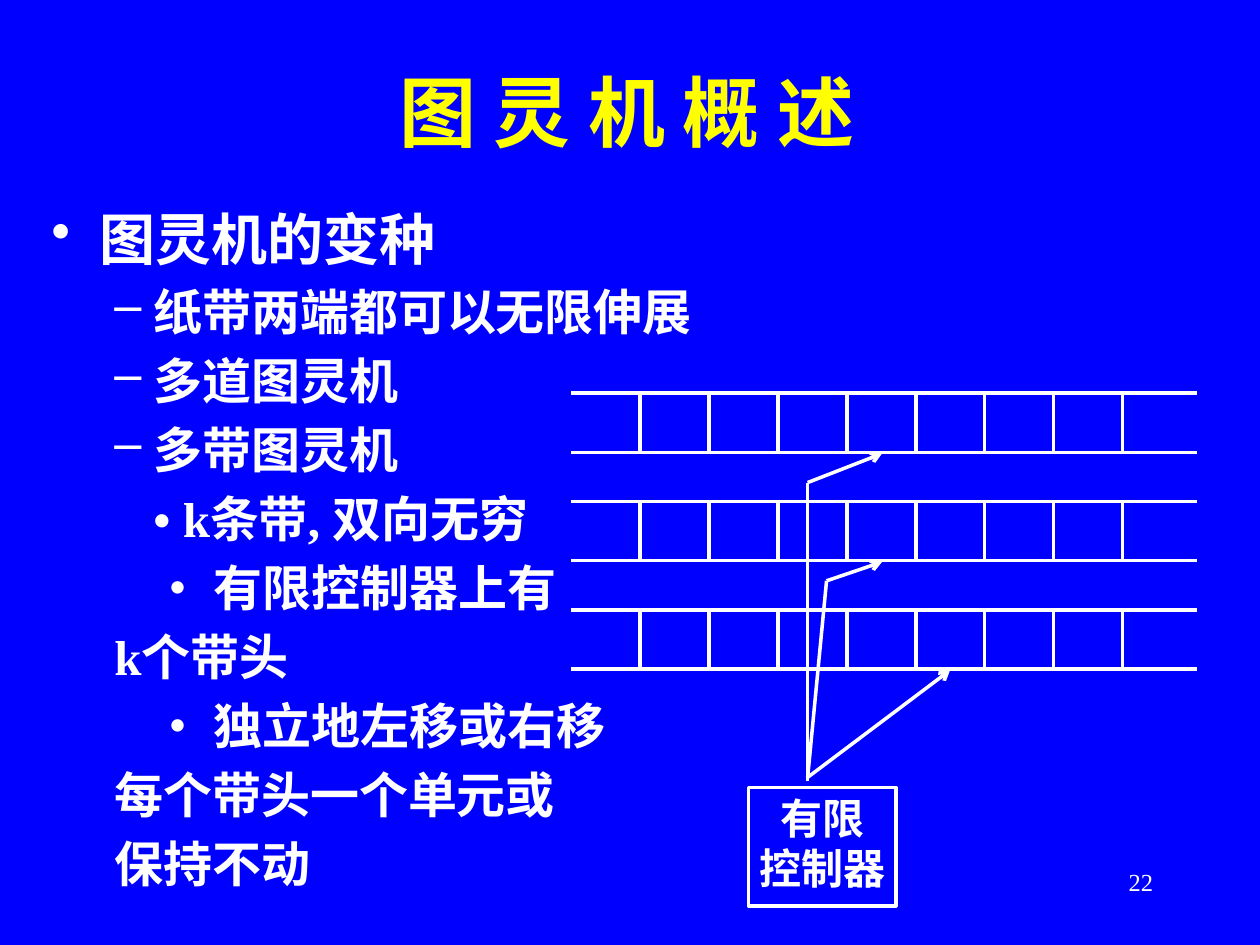
from pptx import Presentation
from pptx.dml.color import RGBColor
from pptx.enum.shapes import MSO_CONNECTOR as Link, MSO_SHAPE as Shape
from pptx.enum.text import MSO_ANCHOR as Anchor, PP_ALIGN as Align
from pptx.oxml.ns import qn
from pptx.util import Inches, Pt
from lxml.etree import SubElement as Sub

BLUE = RGBColor(0x00, 0x00, 0xFF)
WHITE = RGBColor(0xFF, 0xFF, 0xFF)
YELLOW = RGBColor(0xFF, 0xFF, 0x00)
SERIF = "Times New Roman"
SANS = "Noto Sans CJK SC"

deck = Presentation()
deck.slide_width, deck.slide_height = Inches(10), Inches(7.5)
slide = deck.slides.add_slide(deck.slide_layouts[5])
slide.background.fill.solid()
slide.background.fill.fore_color.rgb = BLUE
shapes = slide.shapes


def style(para, size, name=SERIF, color=WHITE, bold=True):
    font = para.font
    font.size, font.name, font.bold = Pt(size), name, bold
    font.color.rgb = color


def draw(x1, y1, x2, y2, arrow=False):
    line = shapes.add_connector(
        Link.STRAIGHT, Inches(x1), Inches(y1), Inches(x2), Inches(y2))
    line.line.color.rgb = WHITE
    line.line.width = Pt(2)
    if arrow:
        Sub(line.line._get_or_add_ln(), qn("a:tailEnd"), type="arrow")
    Sub(line._element.spPr, qn("a:effectLst"))


title = shapes.title
title.left, title.top = Inches(0.25), Inches(0.25)
title.width, title.height = Inches(9.45), Inches(1.26)
frame = title.text_frame
frame.text = "图 灵 机 概 述"
frame.vertical_anchor = Anchor.MIDDLE
para = frame.paragraphs[0]
para.alignment = Align.CENTER
style(para, 44, color=YELLOW)

points = [
    (0, "•", "图灵机的变种"),
    (1, "–", "纸带两端都可以无限伸展"),
    (1, "–", "多道图灵机"),
    (1, "–", "多带图灵机"),
    (1, "", "\t• k条带, 双向无穷"),
    (1, "", "\t• 有限控制器上有"),
    (1, "", "k个带头"),
    (1, "", "\t• 独立地左移或右移"),
    (1, "", "每个带头一个单元或"),
    (1, "", "保持不动"),
]
indents = [(0.38, -0.38), (0.81, -0.31)]
body = shapes.add_textbox(Inches(0.31), Inches(1.57), Inches(9.45), Inches(5.51))
frame = body.text_frame
frame.word_wrap = True
for i, (level, mark, words) in enumerate(points):
    para = frame.add_paragraph() if i else frame.paragraphs[0]
    para.text = words
    para.level = level
    if i:
        para.space_before = Pt(5.8)
    props = para._p.get_or_add_pPr()
    margin, indent = indents[level]
    props.set("marL", str(Inches(margin)))
    props.set("indent", str(Inches(indent)))
    if mark:
        Sub(props, qn("a:buChar"), char=mark)
    else:
        Sub(props, qn("a:buNone"))
    style(para, 32 - 4 * level)

left, cell, high = 5.08, 0.547, 0.47
right = left + 7 * cell
for row in range(3):
    top = 3.12 + 0.86 * row
    for col in range(7):
        box = shapes.add_shape(
            Shape.RECTANGLE, Inches(left + col * cell), Inches(top),
            Inches(cell), Inches(high))
        box.fill.background()
        box.line.color.rgb = WHITE
        box.line.width = Pt(2)
        box.shadow.inherit = False
    for y in (top, top + high):
        draw(4.53, y, 5.12, y)
        draw(right, y, 9.5, y)

control = shapes.add_shape(
    Shape.RECTANGLE, Inches(5.94), Inches(6.25), Inches(1.17), Inches(0.94))
control.fill.background()
control.line.color.rgb = WHITE
control.line.width = Pt(2)
control.shadow.inherit = False
frame = control.text_frame
frame.margin_left = frame.margin_right = Inches(0.06)
frame.margin_top = frame.margin_bottom = Inches(0.04)
frame.vertical_anchor = Anchor.TOP
frame.text = "有限\n控制器"
for para in frame.paragraphs:
    para.alignment = Align.CENTER
    style(para, 24, SANS)

draw(6.41, 3.83, 6.41, 6.2)
draw(6.41, 3.83, 7, 3.6, True)
draw(6.41, 6.17, 6.56, 4.61)
draw(6.56, 4.61, 7, 4.46, True)
draw(6.41, 6.17, 7.54, 5.32, True)

number = shapes.add_textbox(Inches(7.17), Inches(6.83), Inches(2.08), Inches(0.5))
frame = number.text_frame
frame.word_wrap = True
frame.text = "22"
para = frame.paragraphs[0]
para.alignment = Align.RIGHT
style(para, 14, bold=False)

deck.save("out.pptx")
